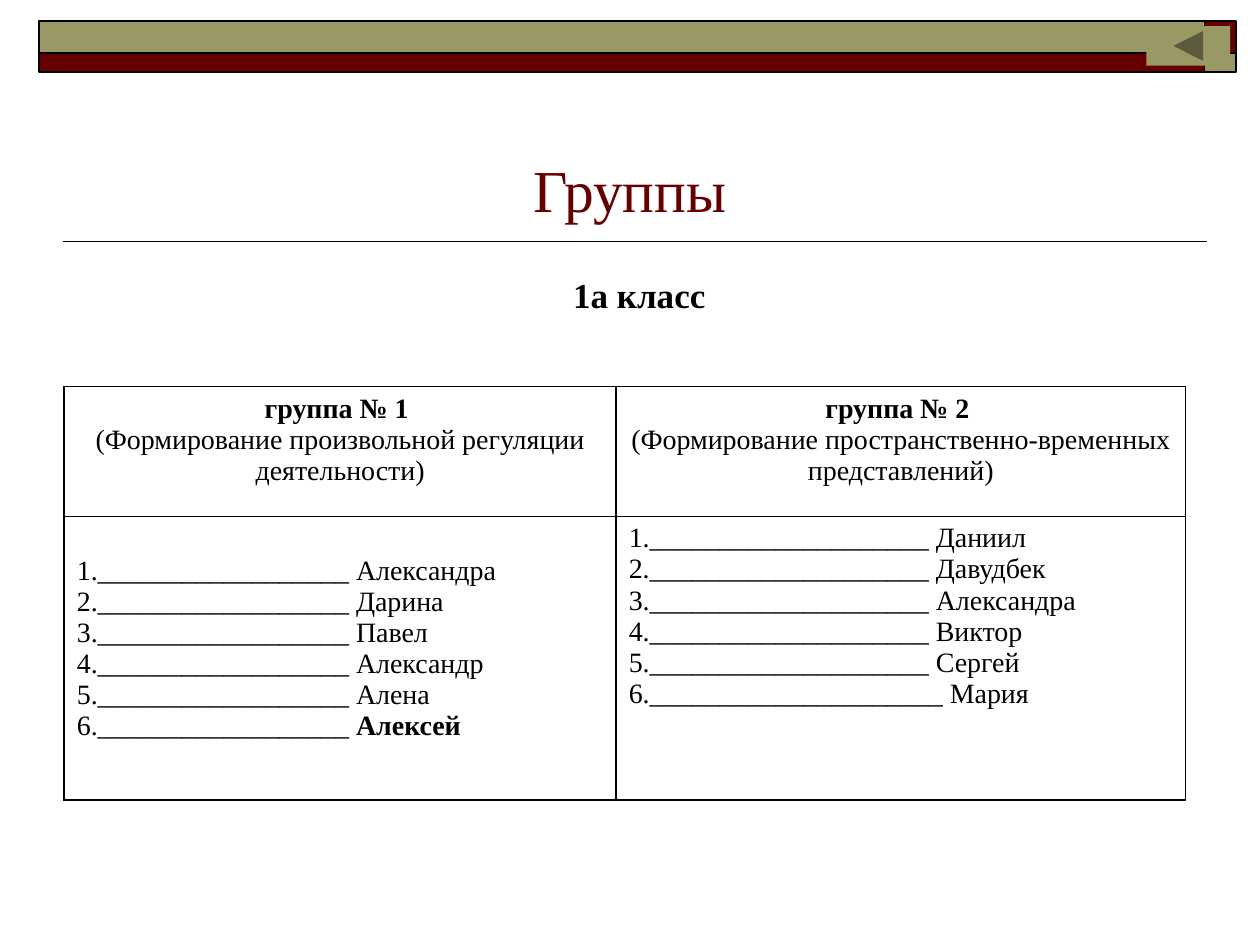
from lxml.etree import SubElement
from pptx import Presentation
from pptx.dml.color import RGBColor
from pptx.enum.shapes import MSO_CONNECTOR, MSO_SHAPE
from pptx.enum.text import MSO_ANCHOR, PP_ALIGN
from pptx.oxml.ns import qn
from pptx.util import Pt

TITLE = "Группы"
CLASS_NAME = "1а класс"
GROUPS = [
    {
        "heading": "группа № 1 ",
        "aim": "(Формирование произвольной регуляции деятельности)",
        "blanks": [18] * 6,
        "pupils": ["Александра", "Дарина", "Павел", "Александр", "Алена", "Алексей"],
        "bold": {"Алексей"},
        "top": 22,
    },
    {
        "heading": "группа № 2 ",
        "aim": "(Формирование пространственно-временных представлений)",
        "blanks": [20] * 5 + [21],
        "pupils": ["Даниил", "Давудбек", "Александра", "Виктор", "Сергей", "Мария"],
        "bold": set(),
        "top": 3.6,
    },
]

FONT = "Times New Roman"
BLACK = RGBColor(0x00, 0x00, 0x00)
MAROON = RGBColor(0x66, 0x00, 0x00)
OLIVE = RGBColor(0x99, 0x99, 0x66)

BAND_COLUMNS = [(22.3, 666), (688.3, 18)]
BAND_ROWS = [(12.2, 18), (30.2, 10.8)]
BAND_COLORS = [[OLIVE, MAROON], [MAROON, OLIVE]]
COLUMN_WIDTHS = [315.4, 325.4]
ROW_HEIGHTS = [74.2, 162]


def style_run(run, size, color=BLACK, bold=False):
    run.font.name = FONT
    run.font.size = Pt(size)
    run.font.bold = bold
    run.font.color.rgb = color


def add_block(slide, preset, left, top, width, height, color):
    block = slide.shapes.add_shape(preset, Pt(left), Pt(top), Pt(width), Pt(height))
    block.shadow.inherit = False
    block.fill.solid()
    block.fill.fore_color.rgb = color
    return block


def border_cell(cell):
    properties = cell._tc.get_or_add_tcPr()
    for side in ("a:lnL", "a:lnR", "a:lnT", "a:lnB"):
        border = SubElement(properties, qn(side), w=str(Pt(1)))
        SubElement(SubElement(border, qn("a:solidFill")), qn("a:srgbClr"), val=str(BLACK))
    cell.fill.background()


def number_paragraph(paragraph):
    properties = paragraph._p.get_or_add_pPr()
    properties.set("marL", "0")
    properties.set("indent", "0")
    SubElement(properties, qn("a:buFont"), typeface=FONT)
    SubElement(properties, qn("a:buAutoNum"), type="arabicPeriod")


def fill_heading(cell, group):
    cell.text_frame.text = group["heading"] + "\n" + group["aim"]
    for paragraph, bold in zip(cell.text_frame.paragraphs, (True, False)):
        paragraph.alignment = PP_ALIGN.CENTER
        style_run(paragraph.runs[0], 16, bold=bold)


def fill_pupils(cell, group):
    cell.margin_top = Pt(group["top"])
    frame = cell.text_frame
    for index, (blank, pupil) in enumerate(zip(group["blanks"], group["pupils"])):
        paragraph = frame.add_paragraph() if index else frame.paragraphs[0]
        number_paragraph(paragraph)
        for text, bold in (("_" * blank + " ", False), (pupil, pupil in group["bold"])):
            run = paragraph.add_run()
            run.text = text
            style_run(run, 16, bold=bold)


def main():
    deck = Presentation()
    deck.slide_width, deck.slide_height = Pt(720), Pt(540)
    slide = deck.slides.add_slide(deck.slide_layouts[5])

    rule = slide.shapes.add_connector(
        MSO_CONNECTOR.STRAIGHT, Pt(36), Pt(138), Pt(690), Pt(138))
    rule.line.color.rgb = BLACK
    rule.line.width = Pt(1)
    SubElement(rule._element.spPr, qn("a:effectLst"))

    for (top, height), colors in zip(BAND_ROWS, BAND_COLORS):
        for (left, width), color in zip(BAND_COLUMNS, colors):
            band = add_block(slide, MSO_SHAPE.RECTANGLE, left, top, width, height, color)
            band.line.color.rgb = BLACK
            band.line.width = Pt(1)

    title = slide.shapes.title
    title.left, title.top, title.width, title.height = Pt(36), Pt(42), Pt(648), Pt(90)
    title.text_frame.text = TITLE
    title.text_frame.vertical_anchor = MSO_ANCHOR.BOTTOM
    title.text_frame.paragraphs[0].alignment = PP_ALIGN.CENTER
    style_run(title.text_frame.paragraphs[0].runs[0], 34, MAROON)

    class_label = slide.shapes.add_textbox(Pt(320.4), Pt(151.2), Pt(90), Pt(55.4))
    class_label.text_frame.text = CLASS_NAME
    class_label.text_frame.margin_top = Pt(5)
    class_label.text_frame.word_wrap = False
    style_run(class_label.text_frame.paragraphs[0].runs[0], 20, bold=True)

    table = slide.shapes.add_table(
        2, len(GROUPS), Pt(36.7), Pt(221),
        Pt(sum(COLUMN_WIDTHS)), Pt(sum(ROW_HEIGHTS))).table
    table.first_row = table.horz_banding = False
    for row, height in zip(table.rows, ROW_HEIGHTS):
        row.height = Pt(height)
    for column, (group, width) in enumerate(zip(GROUPS, COLUMN_WIDTHS)):
        table.columns[column].width = Pt(width)
        for row, fill_cell in enumerate((fill_heading, fill_pupils)):
            cell = table.cell(row, column)
            border_cell(cell)
            fill_cell(cell, group)

    back_button = add_block(
        slide, MSO_SHAPE.ACTION_BUTTON_BACK_OR_PREVIOUS, 655, 15, 48, 22.5, OLIVE)
    back_button.line.fill.background()

    deck.save("out.pptx")


if __name__ == "__main__":
    main()
